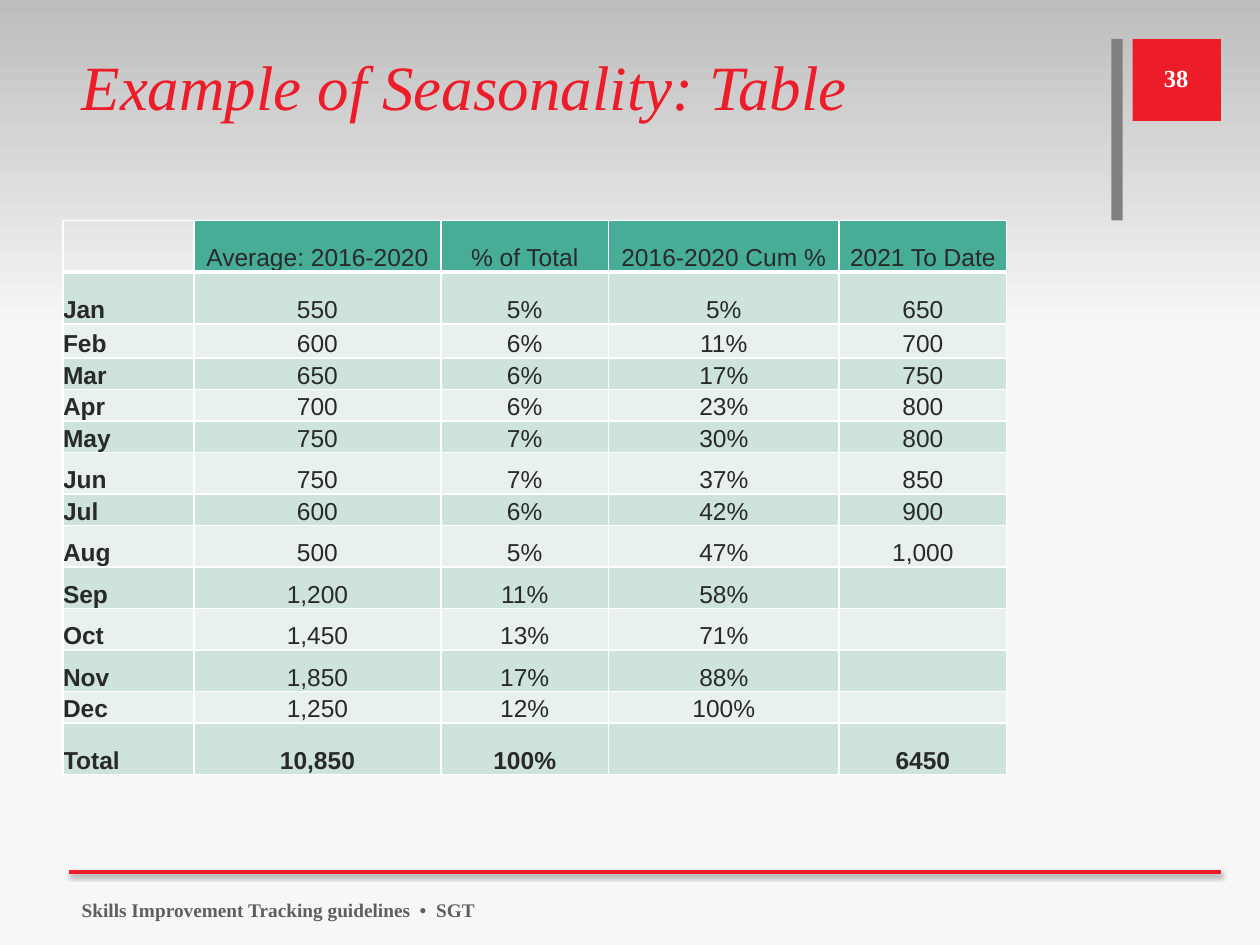
from copy import deepcopy
from dataclasses import dataclass

from lxml import etree
from pptx import Presentation
from pptx.dml.color import RGBColor
from pptx.enum.shapes import MSO_CONNECTOR, MSO_SHAPE
from pptx.enum.text import MSO_ANCHOR, PP_ALIGN
from pptx.oxml import parse_xml
from pptx.oxml.ns import nsdecls, qn
from pptx.util import Inches, Pt

RECTANGLE = MSO_SHAPE.RECTANGLE
STRAIGHT = MSO_CONNECTOR.STRAIGHT
TOP, MIDDLE, BOTTOM = MSO_ANCHOR.TOP, MSO_ANCHOR.MIDDLE, MSO_ANCHOR.BOTTOM
LEFT, CENTER = PP_ALIGN.LEFT, PP_ALIGN.CENTER


@dataclass(frozen=True)
class Theme:
    red: str = "ED1C29"
    gray: str = "808080"
    footer: str = "5E5E5E"
    white: str = "FFFFFF"
    ink: str = "292929"
    header: str = "48AD97"
    bands: tuple = ("CFE3DD", "E9F1EF")
    backdrop: tuple = (("BDBDBD", 0), ("F7F7F7", 0.35), ("F8F8F8", 1))
    serif: str = "Times New Roman"
    sans: str = "Arial"
    title_size: int = 36
    body_size: int = 14
    footer_size: int = 11


theme = Theme()


def add_span(para, text, color, **format_values):
    span = para.add_run()
    span.text = text
    span.font.color.rgb = RGBColor.from_string(color)
    for name, value in format_values.items():
        setattr(span.font, name, value)


def add_block(left, top, width, height):
    """Add a rectangle without outline or shadow."""
    block = page.shapes.add_shape(
        RECTANGLE, Inches(left), Inches(top), Inches(width), Inches(height))
    block.shadow.inherit = False
    block.line.fill.background()
    return block


deck = Presentation()
deck.slide_width, deck.slide_height = Inches(10), Inches(7.5)
page = deck.slides.add_slide(deck.slide_layouts[6])

# Shaded backdrop
backdrop = add_block(0, 0, 10, 7.5)
backdrop.fill.gradient()
backdrop.fill.gradient_angle = 270
stop_list = next(backdrop._element.iter(qn("a:gsLst")))
stop_list.append(deepcopy(stop_list[-1]))
for stop, (color, position) in zip(backdrop.fill.gradient_stops, theme.backdrop):
    stop.color.rgb = RGBColor.from_string(color)
    stop.position = position

# Corner marker and footer rule
for color, place in ((theme.red, (8.99, 0.31, 0.7, 0.65)),
                     (theme.gray, (8.82, 0.31, 0.09, 1.44))):
    block = add_block(*place)
    block.fill.solid()
    block.fill.fore_color.rgb = RGBColor.from_string(color)

rule = page.shapes.add_connector(
    STRAIGHT, Inches(0.55), Inches(6.92), Inches(9.69), Inches(6.92))
rule.line.color.rgb = RGBColor.from_string(theme.red)
rule.line.width = Pt(2)
rule._element.spPr.append(parse_xml(
    f'<a:effectLst {nsdecls("a")}><a:outerShdw blurRad="{Pt(3.1)}" dist="{Pt(1.6)}" '
    'dir="5400000" rotWithShape="0"><a:srgbClr val="000000"><a:alpha val="38000"/>'
    '</a:srgbClr></a:outerShdw></a:effectLst>'))

# Title, footer and page number
labels = [
    ("Example of Seasonality: Table", (0.55, 0.33, 8.26, 1.44), TOP, LEFT, theme.red,
     {"size": Pt(theme.title_size), "italic": True}),
    ("Skills Improvement Tracking guidelines  •  SGT", (0.55, 7.02, 6.62, 0.4), MIDDLE,
     LEFT, theme.footer, {"size": Pt(theme.footer_size), "bold": True}),
    ("38", (9, 0.42, 0.67, 0.4), MIDDLE, CENTER, theme.white,
     {"size": Pt(theme.body_size), "bold": True}),
]
for text, place, anchor, alignment, color, format_values in labels:
    box = page.shapes.add_textbox(*map(Inches, place))
    box.text_frame.word_wrap = True
    box.text_frame.vertical_anchor = anchor
    para = box.text_frame.paragraphs[0]
    para.alignment = alignment
    add_span(para, text, color, name=theme.serif, **format_values)

# Seasonality table
rows = [
    ("", "Average: 2016-2020", "% of Total", "2016-2020 Cum %", "2021 To Date"),
    ("Jan", "550", "5%", "5%", "650"),
    ("Feb", "600", "6%", "11%", "700"),
    ("Mar", "650", "6%", "17%", "750"),
    ("Apr", "700", "6%", "23%", "800"),
    ("May", "750", "7%", "30%", "800"),
    ("Jun", "750", "7%", "37%", "850"),
    ("Jul", "600", "6%", "42%", "900"),
    ("Aug", "500", "5%", "47%", "1,000"),
    ("Sep", "1,200", "11%", "58%", ""),
    ("Oct", "1,450", "13%", "71%", ""),
    ("Nov", "1,850", "17%", "88%", ""),
    ("Dec", "1,250", "12%", "100%", ""),
    ("Total", "10,850", "100%", "", "6450"),
]
column_widths = (1.04, 1.96, 1.33, 1.83, 1.33)
tall, medium, short = 0.41, 0.33, 0.25
row_heights = (tall, tall, 0.27, short, short, short, medium, short,
               medium, medium, medium, medium, short, tall)

table = page.shapes.add_table(
    len(rows), len(column_widths), Inches(0.5), Inches(1.75),
    Inches(sum(column_widths)), Inches(sum(row_heights))).table
table.first_row = table.horz_banding = False
for column, width in zip(table.columns, column_widths):
    column.width = Inches(width)
for row, height in zip(table.rows, row_heights):
    row.height = Inches(height)

cell_format = {"margin_left": 0, "margin_right": 0, "margin_top": 0,
               "margin_bottom": 0, "vertical_anchor": BOTTOM}
for row_index, values in enumerate(rows):
    is_header = row_index == 0
    is_total = row_index == len(rows) - 1
    for column_index, text in enumerate(values):
        cell = table.cell(row_index, column_index)
        is_label = column_index == 0
        for name, value in cell_format.items():
            setattr(cell, name, value)

        properties = cell._tc.get_or_add_tcPr()
        for side in ("lnL", "lnR", "lnT", "lnB"):
            width = 3 if is_header and side == "lnB" else 1
            border = etree.SubElement(properties, qn(f"a:{side}"), w=str(Pt(width)))
            paint = etree.SubElement(border, qn("a:solidFill"))
            etree.SubElement(paint, qn("a:srgbClr"), val=theme.white)

        if is_header and is_label:
            cell.fill.background()
        else:
            cell.fill.solid()
            color = theme.header if is_header else theme.bands[(row_index - 1) % 2]
            cell.fill.fore_color.rgb = RGBColor.from_string(color)

        para = cell.text_frame.paragraphs[0]
        para.alignment = LEFT if is_label else CENTER
        if text:
            add_span(para, text, theme.ink, name=theme.sans,
                     size=Pt(theme.body_size), bold=is_label or is_total)
        else:
            # Keep an empty cell from stretching its row
            para._p.get_or_add_endParaRPr().set("sz", str(theme.body_size * 100))

deck.save("out.pptx")
